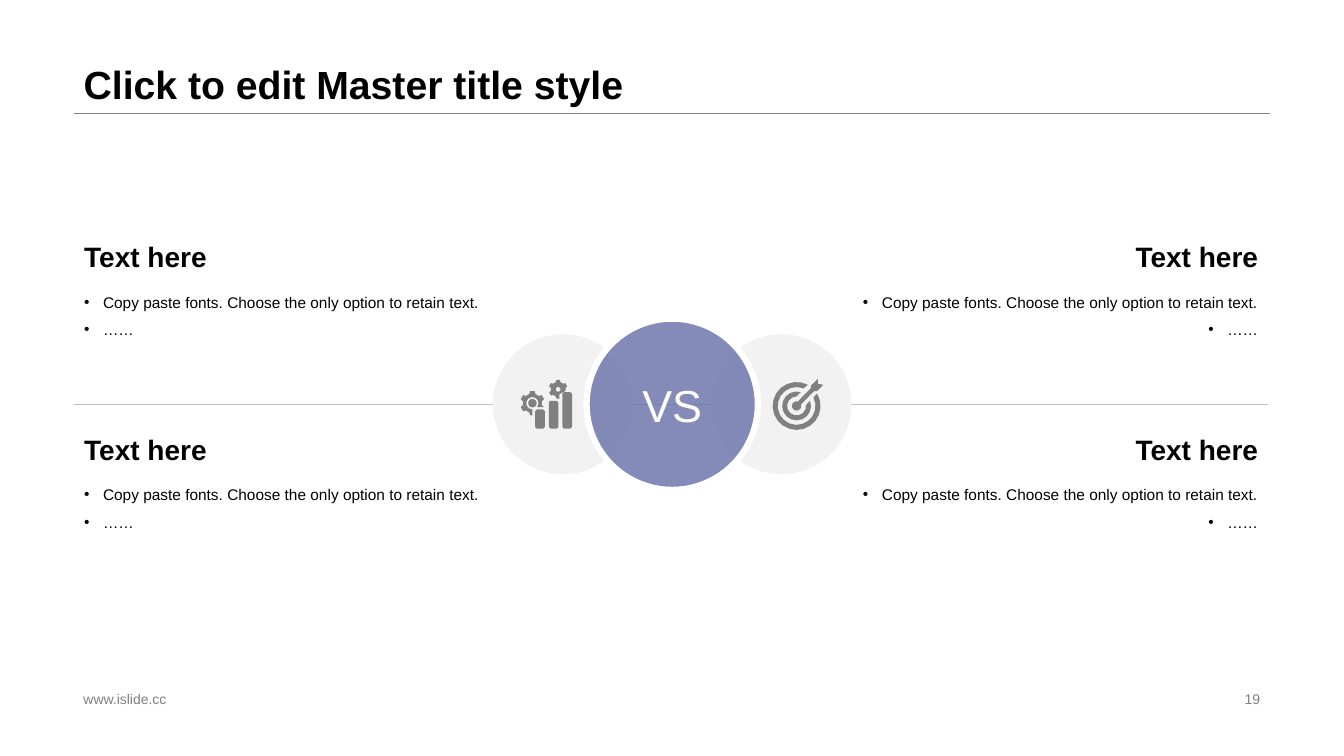
from dataclasses import dataclass
from math import cos, radians, sin, sqrt
from typing import Any, NamedTuple

from lxml import etree
from pptx import Presentation
from pptx.dml.color import RGBColor
from pptx.enum.shapes import MSO_CONNECTOR, MSO_SHAPE
from pptx.enum.text import MSO_ANCHOR, MSO_AUTO_SIZE, PP_ALIGN
from pptx.oxml.ns import qn
from pptx.util import Pt

LEFT, CENTER, RIGHT = PP_ALIGN.LEFT, PP_ALIGN.CENTER, PP_ALIGN.RIGHT
TOP, MIDDLE, BOTTOM = MSO_ANCHOR.TOP, MSO_ANCHOR.MIDDLE, MSO_ANCHOR.BOTTOM
NO_FIT = MSO_AUTO_SIZE.NONE
STRAIGHT = MSO_CONNECTOR.STRAIGHT
OVAL = MSO_SHAPE.OVAL

Point = tuple[float, float]
Contour = list[Point]


@dataclass(frozen=True)
class Theme:
    font: str = "Arial"
    ink: str = "000000"
    white: str = "FFFFFF"
    gray: str = "808080"
    rule: str = "BFBFBF"
    disc: str = "F2F2F2"
    accent: str = "676FA7"
    title: float = 28
    heading: float = 20
    body: float = 11
    footer: float = 10
    versus: float = 32


class Box(NamedTuple):
    x: float
    y: float
    w: float
    h: float


class Style(NamedTuple):
    size: float
    color: str
    bold: bool = False
    align: Any = LEFT
    anchor: Any = TOP
    spacing: float = 1.0
    bullet: str = ""


class Column(NamedTuple):
    x: float
    align: Any


class Rule(NamedTuple):
    x1: float
    x2: float
    y: float
    color: str


class Footer(NamedTuple):
    text: str
    box: Box
    align: Any


T = Theme()
CX, CY = 480.2, 288.8
DISC_OFFSET = 78
COLUMN_W, HEADING_H, BODY_H = 298.8, 37.44, 80
COLUMNS = [Column(53, LEFT), Column(607, RIGHT)]
ROWS = [161.5, 298.8]
HEADING = "Text here"
BODY = ["Copy paste fonts. Choose the only option to retain text.", "……"]
TITLE_RULE = Rule(52.56, 907.2, 80.64, T.gray)
MIDDLE_RULE = Rule(53, 905.76, CY, T.rule)
FOOTERS = [
    Footer("www.islide.cc", Box(52.56, 491.04, 326.16, 16.56), LEFT),
    Footer("19", Box(678.24, 491.04, 228.96, 16.56), RIGHT),
]


def apply(obj: Any, values: dict[str, Any]) -> None:
    for name, value in values.items():
        setattr(obj, name, value)


def place(sp: Any, box: Box) -> None:
    apply(sp, dict(zip(("left", "top", "width", "height"), map(Pt, box))))


def add_bullet(p: Any, char: str) -> None:
    pPr = p._p.get_or_add_pPr()
    for name, value in {"marL": Pt(13.5), "indent": -Pt(13.5)}.items():
        pPr.set(name, str(int(value)))
    etree.SubElement(pPr, qn("a:buFont")).set("typeface", T.font)
    etree.SubElement(pPr, qn("a:buChar")).set("char", char)


def write(tf: Any, lines: list[str], style: Style) -> None:
    apply(tf, {"word_wrap": True, "auto_size": NO_FIT, "vertical_anchor": style.anchor})
    for i, line in enumerate(lines):
        p = tf.add_paragraph() if i else tf.paragraphs[0]
        if style.bullet:
            add_bullet(p, style.bullet)
        apply(p, {"alignment": style.align, "line_spacing": style.spacing})
        r = p.add_run()
        r.text = line
        apply(r.font, {"name": T.font, "size": Pt(style.size), "bold": style.bold})
        r.font.color.rgb = RGBColor.from_string(style.color)


def add_text(s: Any, box: Box, lines: list[str], style: Style) -> None:
    write(s.shapes.add_textbox(*map(Pt, box)).text_frame, lines, style)


def add_rule(s: Any, rule: Rule) -> None:
    sp = s.shapes.add_connector(STRAIGHT, Pt(rule.x1), Pt(rule.y), Pt(rule.x2), Pt(rule.y))
    sp.line.color.rgb = RGBColor.from_string(rule.color)
    sp.line.width = Pt(0.25)
    etree.SubElement(sp._element.spPr, qn("a:effectLst"))


def paint(sp: Any, color: str) -> None:
    sp.shadow.inherit = False
    sp.fill.solid()
    sp.fill.fore_color.rgb = RGBColor.from_string(color)
    sp.line.fill.background()


def add_disc(s: Any, x: float, size: float, color: str) -> Any:
    box = Box(x - size / 2, CY - size / 2, size, size)
    sp = s.shapes.add_shape(OVAL, *map(Pt, box))
    paint(sp, color)
    return sp


def add_versus(s: Any) -> None:
    sp = add_disc(s, CX, 122.4, T.accent)
    color = sp.fill._xPr.find(qn("a:solidFill"))[0]
    etree.SubElement(color, qn("a:alpha")).set("val", "80000")
    sp.line.color.rgb = RGBColor.from_string(T.white)
    sp.line.width = Pt(4.5)
    tf = sp.text_frame
    apply(tf, {f"margin_{side}": Pt(1.44) for side in ("left", "top", "right", "bottom")})
    write(tf, ["VS"], Style(T.versus, T.white, align=CENTER, anchor=MIDDLE))


def polar(c: Point, r: float, angle: float) -> Point:
    return c[0] + r * cos(radians(angle)), c[1] - r * sin(radians(angle))


def arc(c: Point, r: float, start: float, end: float) -> Contour:
    steps = max(1, round(abs(end - start) * sqrt(r) / 72))
    return [polar(c, r, start + (end - start) * i / steps) for i in range(steps + 1)]


def gear_edge(c: Point, r: float, start: float, end: float) -> Contour:
    tooth = [(-18, 0.79), (-11, 1), (11, 1), (18, 0.79)]
    knots = [(mid + da, k * r) for mid in range(-30, 331, 60) for da, k in tooth]
    return [polar(c, k, a) for a, k in knots if start <= a <= end] + [polar(c, r, end)]


def bar(x: float, top: float, w: float, bottom: float, r: float) -> Contour:
    corners = [(x + w - r, top + r), (x + r, top + r),
               (x + r, bottom - r), (x + w - r, bottom - r)]
    return [pt for i, c in enumerate(corners) for pt in arc(c, r, 90 * i, 90 * i + 90)]


def add_icon(s: Any, contours: list[Contour]) -> None:
    paths = [[(Pt(x), Pt(y)) for x, y in contour] for contour in contours]
    fb = s.shapes.build_freeform(*paths[0][0], scale=1.0)
    for i, points in enumerate(paths):
        if i:
            fb.move_to(*points[0])
        fb.add_line_segments(points[1:], close=True)
    paint(fb.convert_to_shape(), T.gray)


def target_icon() -> list[Contour]:
    c = (569, 290)
    arrow = [(3, -0.9), (12.4, -10.6), (14.6, -10.6), (19, -15.1), (15.3, -15.8),
             (15.1, -19.4), (10.3, -14.6), (10.3, -12.8), (0.9, -3.2)]
    return [
        arc(c, 17.1, 62, 391) + arc(c, 13.5, 387, 68),
        arc(c, 10.3, 73, 381) + arc(c, 6.8, 366, 90),
        arc(c, 3.4, 75, 370) + [(c[0] + dx, c[1] + dy) for dx, dy in arrow],
    ]


def gears_icon() -> list[Contour]:
    big, small = (380.3, 288), (398.7, 278.1)
    bars = [bar(382.3 + 9.7 * i, 292.5 - 6.2 * i, 6.9, 306.2, 1.2) for i in range(3)]
    return bars + [
        gear_edge(big, 8.8, -19, 270) + arc(big, 4.4, 270, -40),
        arc(big, 3.1, 0, 360),
        gear_edge(small, 6.8, -12, 277) + [polar(small, 3.6, 285)],
        arc(small, 1.8, 0, 360),
    ]


def main() -> None:
    prs = Presentation()
    apply(prs, {"slide_width": Pt(960), "slide_height": Pt(540)})
    s = prs.slides.add_slide(prs.slide_layouts[5])
    place(s.shapes.title, Box(52.56, 0, 854.64, 80.64))
    write(s.shapes.title.text_frame, ["Click to edit Master title style"],
          Style(T.title, T.ink, True, LEFT, BOTTOM, 0.9))
    add_rule(s, TITLE_RULE)
    for text, box, align in FOOTERS:
        add_text(s, box, [text], Style(T.footer, T.gray, align=align, anchor=MIDDLE))
    add_rule(s, MIDDLE_RULE)
    for side in (-1, 1):
        add_disc(s, CX + side * DISC_OFFSET, 100, T.disc)
    add_icon(s, target_icon())
    add_versus(s)
    add_icon(s, gears_icon())
    for col in COLUMNS:
        for y in ROWS:
            add_text(s, Box(col.x, y, COLUMN_W, HEADING_H), [HEADING],
                     Style(T.heading, T.ink, True, col.align, BOTTOM))
            add_text(s, Box(col.x, y + HEADING_H, COLUMN_W, BODY_H), BODY,
                     Style(T.body, T.ink, align=col.align, spacing=1.5, bullet="•"))
    prs.save("out.pptx")


if __name__ == "__main__":
    main()
